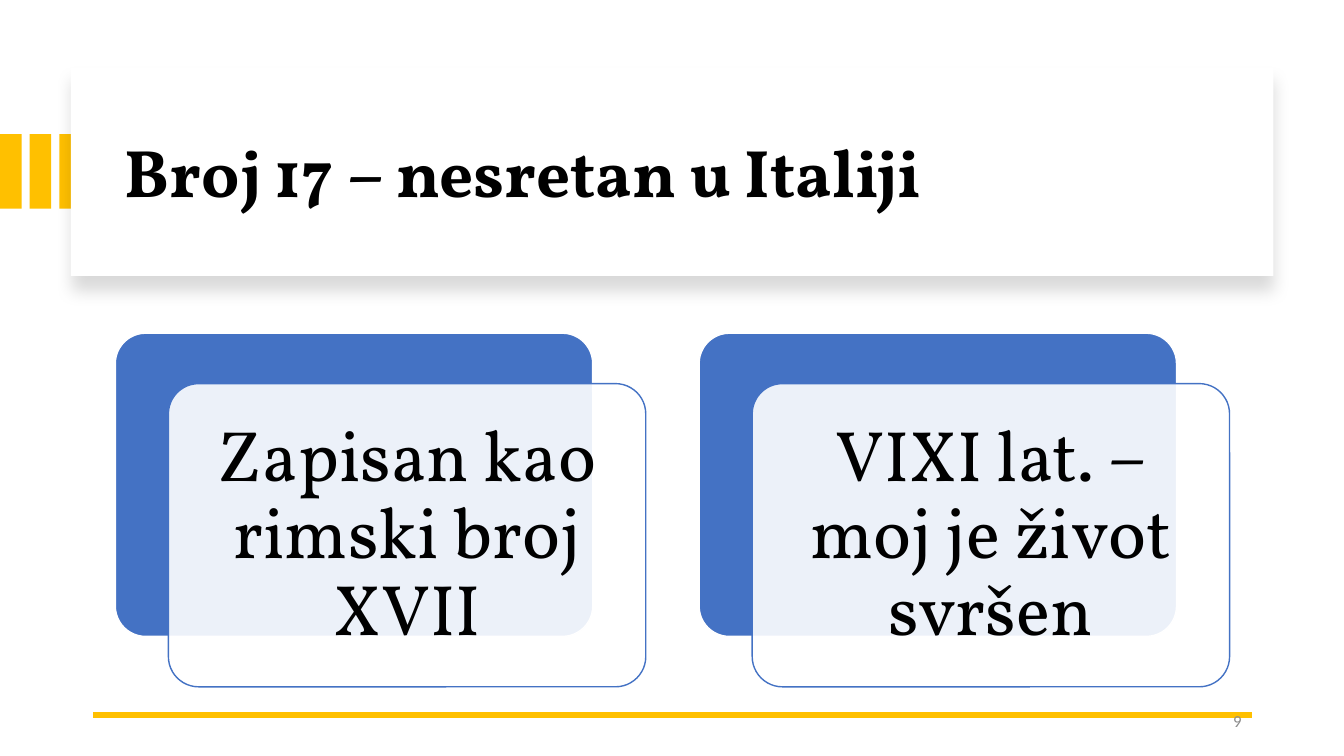
from dataclasses import dataclass
from lxml import etree
from pptx import Presentation
from pptx.dml.color import RGBColor
from pptx.enum.shapes import MSO_CONNECTOR, MSO_SHAPE
from pptx.enum.text import MSO_ANCHOR, PP_ALIGN
from pptx.oxml.ns import qn
from pptx.util import Pt

RECT, ROUND = MSO_SHAPE.RECTANGLE, MSO_SHAPE.ROUNDED_RECTANGLE
LINE = MSO_CONNECTOR.STRAIGHT
MID = MSO_ANCHOR.MIDDLE
LEFT, MIDDLE, RIGHT = PP_ALIGN.LEFT, PP_ALIGN.CENTER, PP_ALIGN.RIGHT


@dataclass
class Theme:
    gold: str = "FFC000"
    blue: str = "4472C4"
    white: str = "FFFFFF"
    black: str = "000000"
    gray: str = "8C8C8C"
    serif: str = "Vollkorn"
    sans: str = "Calibri"
    title: int = 48
    body: int = 51
    small: int = 12


theme = Theme()
deck = Presentation()
deck.slide_width, deck.slide_height = Pt(960), Pt(540)
slide = deck.slides.add_slide(deck.slide_layouts[6])


def add_box(kind, x, y, w, h, fill, line=None):
    box = slide.shapes.add_shape(kind, Pt(x), Pt(y), Pt(w), Pt(h))
    box.shadow.inherit = False
    box.fill.solid()
    box.fill.fore_color.rgb = RGBColor.from_string(fill)
    if line:
        box.line.color.rgb = RGBColor.from_string(line)
        box.line.width = Pt(1)
    else:
        box.line.fill.background()
    return box


def add_text(text, x, y, w, h, face, size, color, align, pad=None, bold=False, lead=None):
    frame = slide.shapes.add_textbox(Pt(x), Pt(y), Pt(w), Pt(h)).text_frame
    frame.word_wrap = True
    frame.vertical_anchor = MID
    if pad:
        frame.margin_left = frame.margin_right = Pt(pad)
        frame.margin_top = frame.margin_bottom = Pt(pad)
    para = frame.paragraphs[0]
    para.text = text
    para.alignment = align
    para.line_spacing = lead
    para.font.name, para.font.size, para.font.bold = face, Pt(size), bold
    para.font.color.rgb = RGBColor.from_string(color)


# Gold stripes at the left edge
for i in range(3):
    add_box(RECT, i * 21.2, 95.8, 15.4, 53.3, theme.gold)

# Title card with a soft shadow below
card = add_box(RECT, 50.6, 48.2, 859, 149, theme.white)
effects = card._element.spPr.find(qn("a:effectLst"))
shade = etree.SubElement(effects, qn("a:outerShdw"), blurRad=str(Pt(11)),
                         dist=str(Pt(10)), dir="5400000", algn="t", rotWithShape="0")
tint = etree.SubElement(shade, qn("a:srgbClr"), val=theme.black)
etree.SubElement(tint, qn("a:alpha"), val="15000")
add_text("Broj 17 – nesretan u Italiji", 82, 64, 801.4, 122.4,
         theme.serif, theme.title, theme.black, LEFT, bold=True, lead=0.9)

# Gold rule at the foot
rule = slide.shapes.add_connector(LINE, Pt(894.2), Pt(510.5), Pt(66.2), Pt(510.5))
rule.line.color.rgb = RGBColor.from_string(theme.gold)
rule.line.width = Pt(4.5)
etree.SubElement(rule._element.spPr, qn("a:effectLst"))

# Two facts, each a blue panel under a translucent white one
facts = ["Zapisan kao rimski broj XVII", "VIXI lat. – moj je život svršen"]
for i, fact in enumerate(facts):
    x, y = 82.4 + i * 417, 238
    back = add_box(ROUND, x, y, 341, 216.6, theme.blue, theme.white)
    front = add_box(ROUND, x + 37.9, y + 36, 341, 216.6, theme.white, theme.blue)
    for panel in (back, front):
        panel.adjustments[0] = 0.1
    glass = front._element.spPr.find(qn("a:solidFill"))[0]
    etree.SubElement(glass, qn("a:alpha"), val="90000")
    add_text(fact, x + 44.2, y + 42.3, 328.3, 203.9, theme.serif, theme.body,
             theme.black, MIDDLE, pad=15.3, lead=0.9)

# Slide number
add_text("9", 678, 500.5, 216, 28.8, theme.sans, theme.small, theme.gray, RIGHT)

deck.save("out.pptx")
